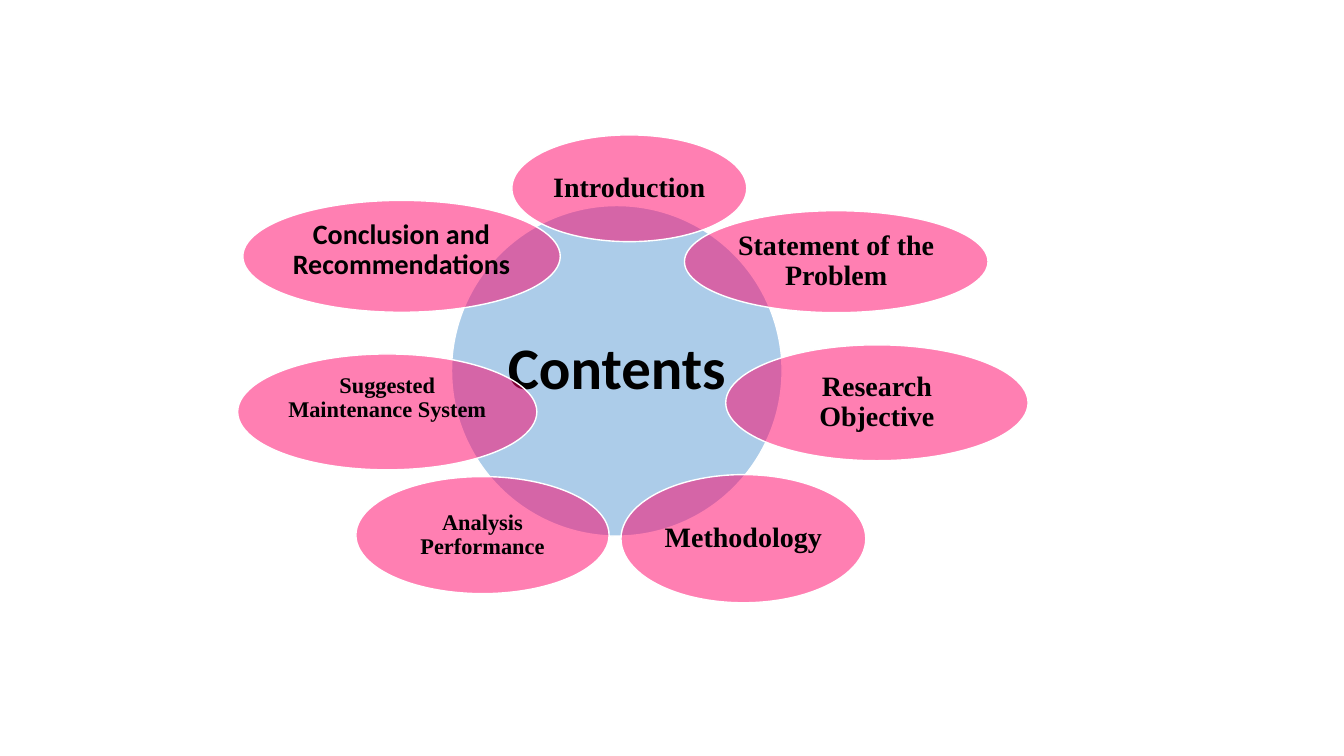
from dataclasses import dataclass

from lxml import etree
from pptx import Presentation
from pptx.dml.color import RGBColor
from pptx.enum.shapes import MSO_SHAPE
from pptx.enum.text import MSO_ANCHOR, PP_ALIGN
from pptx.oxml.ns import qn
from pptx.util import Cm, Pt

OVAL = MSO_SHAPE.OVAL
MIDDLE = MSO_ANCHOR.MIDDLE
CENTER = PP_ALIGN.CENTER

BLUE = "5B9BD5"
PINK = "FF0066"
WHITE = "FFFFFF"
BLACK = "000000"
SERIF = "Times New Roman"
SANS = "Calibri"


@dataclass
class Bubble:
    """An oval with its text; lengths in cm, sizes in points."""
    text: str
    left: float
    top: float
    width: float
    height: float
    size: int = 20
    font: str = SERIF
    fill: str = PINK
    inset: float = 0.07
    lift: float = 0  # extra bottom inset that raises the text


HUB = Bubble("Contents", 11.38, 5.18, 8.33, 8.33, 42, SANS, BLUE, 0.15)
TOPICS = [
    Bubble("Introduction", 12.9, 3.4, 5.92, 2.69),
    Bubble("Statement of the Problem", 17.25, 5.31, 7.65, 2.57),
    Bubble("Suggested Maintenance System", 5.99, 8.92, 7.54, 2.92, 16, lift=0.7),
    Bubble("Analysis Performance", 8.97, 12.01, 6.38, 2.95, 16),
    Bubble("Research Objective", 18.29, 8.69, 7.62, 2.92),
    Bubble("Methodology", 15.65, 11.96, 6.17, 3.23),
    Bubble("Conclusion and Recommendations", 6.12, 5.05, 8, 2.82, font=SANS, lift=0.28),
]


def rgb(color: str) -> RGBColor:
    return RGBColor.from_string(color)


def set_fill(sp, color: str, opacity: int) -> None:
    sp.fill.solid()
    sp.fill.fore_color.rgb = rgb(color)
    clr = sp.fill._xPr.find(qn("a:solidFill")).find(qn("a:srgbClr"))
    etree.SubElement(clr, qn("a:alpha")).set("val", str(opacity * 1000))


def add_bubble(s, b: Bubble) -> None:
    sp = s.shapes.add_shape(OVAL, Cm(b.left), Cm(b.top), Cm(b.width), Cm(b.height))
    sp.shadow.inherit = False
    set_fill(sp, b.fill, 50)
    sp.line.color.rgb = rgb(WHITE)
    sp.line.width = Pt(1)

    tf = sp.text_frame
    tf.word_wrap = True
    tf.vertical_anchor = MIDDLE
    tf.margin_left = tf.margin_right = tf.margin_top = Cm(b.inset)
    tf.margin_bottom = Cm(b.inset + b.lift)
    tf.text = b.text
    p = tf.paragraphs[0]
    p.alignment = CENTER
    p.line_spacing = 0.9
    font = p.runs[0].font
    font.name = b.font
    font.size = Pt(b.size)
    font.bold = True
    font.color.rgb = rgb(BLACK)


def main() -> None:
    prs = Presentation()
    prs.slide_width, prs.slide_height = Cm(33.87), Cm(19.05)
    s = prs.slides.add_slide(prs.slide_layouts[6])
    for bubble in [HUB, *TOPICS]:
        add_bubble(s, bubble)
    prs.save("out.pptx")


if __name__ == "__main__":
    main()
